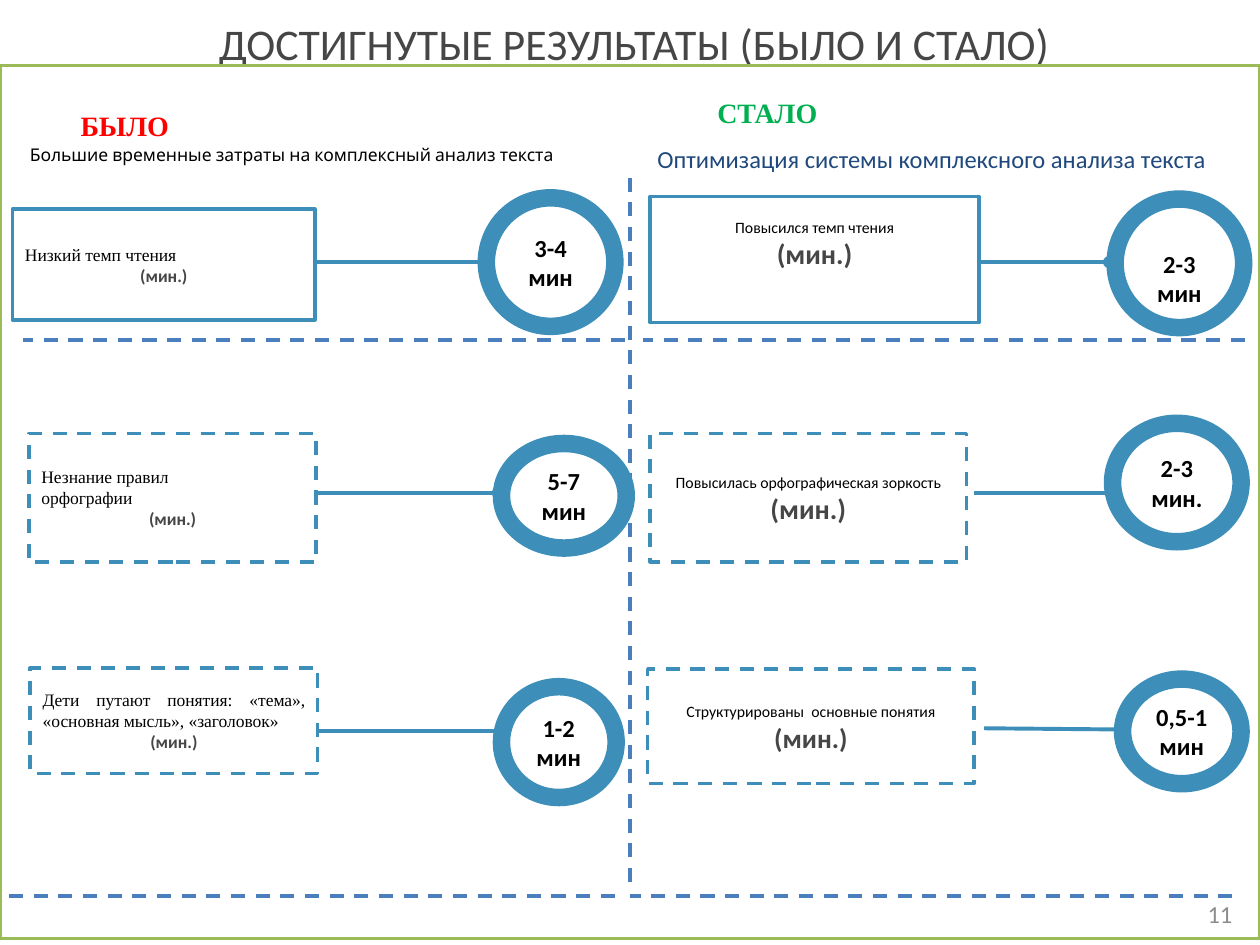
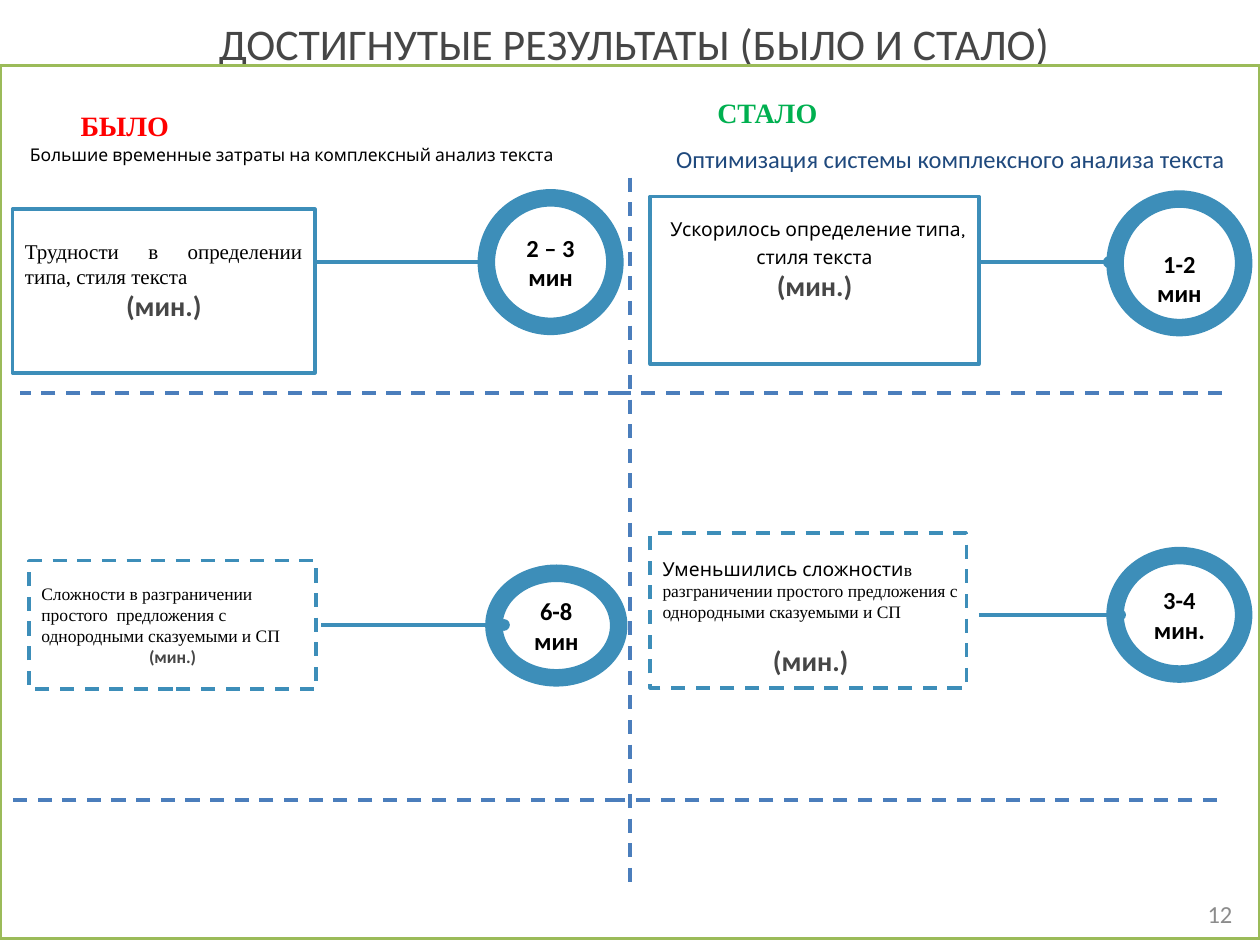
from dataclasses import dataclass

from lxml import etree
from pptx import Presentation
from pptx.dml import color
from pptx.enum import dml, shapes, text
from pptx.oxml import ns
from pptx.util import Emu, Inches, Pt

INK = {
    "blue": "3D8EB9", "dash": "4B7EBC", "green": "9BBB59", "white": "FFFFFF",
    "black": "000000", "grey": "464646", "pale": "8C8C8C", "red": "FF0000",
    "leaf": "00B050", "navy": "1F497D",
}
SANS, SERIF, KARLA = "Calibri", "Times New Roman", "Karla"
WIDE, HIGH = Inches(10), Inches(7.5)
COLS, ROWS = 100, 75
PAD = (1, 0.5, 1, 0.5)
ALIGN = text.PP_ALIGN
LEFT, MID, RIGHT, JUST = ALIGN.LEFT, ALIGN.CENTER, ALIGN.RIGHT, ALIGN.JUSTIFY
TITLE = "ДОСТИГНУТЫЕ РЕЗУЛЬТАТЫ (БЫЛО И СТАЛО) "
Area = tuple[float, float, float, float]


@dataclass(frozen=True)
class Run:
    words: str
    size: float
    font: str = SANS
    ink: str = "black"
    bold: bool = False


@dataclass(frozen=True)
class Para:
    runs: tuple[Run, ...]
    align: ALIGN = MID
    space: float = 1.0
    before: float = 0


@dataclass(frozen=True)
class Label:
    area: Area
    para: Para
    anchor: text.MSO_ANCHOR = text.MSO_ANCHOR.TOP


@dataclass(frozen=True)
class Rule:
    right: float
    row: float
    span: float = 47.8


@dataclass(frozen=True)
class Step:
    box: Area
    paras: list[Para]
    ring: Area
    time: tuple[str, ...]
    wire: Area
    dashed: bool = True
    pad: Area = PAD
    drop: float = 0


@dataclass(frozen=True)
class Page:
    number: str
    goal: float
    steps: list[Step]
    rules: list[Rule]


def col(n: float) -> Emu:
    return Emu(round(WIDE * n / COLS))


def row(n: float) -> Emu:
    return Emu(round(HIGH * n / ROWS))


def place(area: Area) -> tuple[Emu, Emu, Emu, Emu]:
    x, y, w, h = area
    return col(x), row(y), col(w), row(h)


def tint(name: str) -> color.RGBColor:
    return color.RGBColor.from_string(INK[name])


def write(frame, paras: list[Para], anchor=text.MSO_ANCHOR.MIDDLE, pad: Area = PAD) -> None:
    frame.word_wrap = True
    frame.auto_size = text.MSO_AUTO_SIZE.NONE
    frame.vertical_anchor = anchor
    frame.margin_left, frame.margin_top, frame.margin_right, frame.margin_bottom = place(pad)
    for i, para in enumerate(paras):
        line = frame.add_paragraph() if i else frame.paragraphs[0]
        line.alignment = para.align
        line.line_spacing = para.space
        line.space_before = Pt(para.before)
        for part in para.runs:
            run = line.add_run()
            run.text = part.words
            run.font.size = Pt(part.size)
            run.font.name = part.font
            run.font.bold = part.bold
            run.font.color.rgb = tint(part.ink)


def stroke(line, ink: str, width: float, dashed: bool = False) -> None:
    line.color.rgb = tint(ink)
    line.width = Pt(width)
    if dashed:
        line.dash_style = dml.MSO_LINE.DASH


def shape(slide, kind, area: Area, ink: str, width: float, filled: bool, dashed: bool = False):
    item = slide.shapes.add_shape(kind, *place(area))
    item.shadow.inherit = False
    if filled:
        item.fill.solid()
        item.fill.fore_color.rgb = tint("white")
    else:
        item.fill.background()
    stroke(item.line, ink, width, dashed)
    return item


def link(slide, ends: Area, ink: str, width: float, dashed: bool = False, dot: bool = False) -> None:
    wire = slide.shapes.add_connector(shapes.MSO_CONNECTOR.STRAIGHT, *place(ends))
    stroke(wire.line, ink, width, dashed)
    props = wire._element.spPr
    if dot:
        tail = etree.SubElement(props.find(ns.qn("a:ln")), ns.qn("a:tailEnd"))
        tail.set("type", "oval")
    etree.SubElement(props, ns.qn("a:effectLst"))


def label(slide, item: Label) -> None:
    box = slide.shapes.add_textbox(*place(item.area))
    write(box.text_frame, [item.para], item.anchor)


def step(slide, item: Step) -> None:
    kinds = shapes.MSO_SHAPE
    ring = shape(slide, kinds.FLOWCHART_CONNECTOR, item.ring, "blue", 10, True)
    time = [Para((Run(words, 14, bold=True),)) for words in item.time]
    write(ring.text_frame, time, pad=(0.5, item.drop, 0.5, 0))
    link(slide, item.wire, "blue", 2.25, dot=True)
    box = shape(slide, kinds.RECTANGLE, item.box, "blue", 2, not item.dashed, item.dashed)
    write(box.text_frame, item.paras, pad=item.pad)


def one(words: str, size: float, font: str = SANS, ink: str = "black",
        bold: bool = False, align: ALIGN = MID, space: float = 1.0) -> Para:
    return Para((Run(words, size, font, ink, bold),), align, space)


def unit(size: float, before: float = 0) -> Para:
    return Para((Run("(мин.)", size, SANS, "grey", True),), before=before)


def old(words: str, size: float = 10, align: ALIGN = JUST) -> Para:
    return one(words, size, SERIF, align=align)


def new(words: str) -> Para:
    return one(words, 9, space=1.15)


def build(deck, page: Page) -> None:
    slide = deck.slides.add_slide(deck.slide_layouts[5])
    title = slide.shapes.title
    title.left, title.top, title.width, title.height = place((1.2, -0.8, 99, 8.4))
    write(title.text_frame, [one(TITLE, 25, ink="grey")])
    link(slide, (50, 14.1, 50, 70.7), "dash", 2, dashed=True)
    for item in page.steps:
        step(slide, item)
    for rule in page.rules:
        ends = (rule.right, rule.row, rule.right - rule.span, rule.row)
        link(slide, ends, "dash", 2, dashed=True)
    shape(slide, shapes.MSO_SHAPE.RECTANGLE, (0, 5.2, 100, 69.3), "green", 2, False)
    for item in (
        Label((94, 70.5, 4.8, 4), one(page.number, 14, ink="pale", align=RIGHT),
              text.MSO_ANCHOR.MIDDLE),
        Label((2.7, 8.1, 14.4, 3.7), one("БЫЛО", 16, SERIF, "red", True)),
        Label((53.9, 7.1, 14, 3.7), one("СТАЛО", 16, SERIF, "leaf", True)),
        Label((0, 10.9, 46.3, 2.7),
              one("Большие временные затраты на комплексный анализ текста", 10, KARLA)),
        Label((page.goal, 10.9, 46.3, 3.4),
              one("Оптимизация системы комплексного анализа текста", 14, ink="navy")),
    ):
        label(slide, item)


RING_L, WIRE_L = (38.6, 15.7, 10.2, 10.2), (24.3, 20.8, 38.6, 20.8)
RING_R, WIRE_R = (88.5, 15.8, 10.2, 10.2), (76.7, 20.8, 88, 20.8)

PAGES = [
    Page("11", 50.8, [
        Step((1, 16.6, 24, 8.8), [old("Низкий темп чтения"), unit(10)],
             RING_L, ("3-4", "мин"), WIRE_L, dashed=False),
        Step((2.3, 34.4, 22.8, 10.2),
             [old("Незнание правил "), old("орфографии"), unit(10)],
             (39.8, 35.2, 9.9, 8.3), ("5-7", "мин"), (25, 39.1, 39.5, 39.1)),
        Step((2.4, 53, 22.8, 8.4),
             [old("Дети путают понятия: «тема», «основная мысль», «заголовок»"), unit(10)],
             (39.8, 54.5, 9.1, 8.8), ("1-2", "мин"), (25.2, 58, 39.7, 58)),
        Step((51.6, 15.6, 26.1, 10), [new("Повысился темп чтения"), unit(16)],
             RING_R, ("2-3", "мин"), WIRE_R, False, (1, 0.5, 1, 3.2), 2.4),
        Step((51.6, 34.4, 25.1, 10.2),
             [new("Повысилась орфографическая зоркость"), unit(16)],
             (88.3, 33.6, 10.2, 9.4), ("2-3", "мин."), (77.3, 39.1, 88.5, 39.1)),
        Step((51.4, 53.1, 25.9, 9.1),
             [new("Структурированы  основные понятия"), unit(15.5)],
             (89.1, 53.9, 9.4, 8.3), ("0,5-1", "мин"), (78.1, 57.8, 89.2, 57.9)),
    ], [Rule(49.6, 27), Rule(98.8, 27), Rule(48.8, 71.1, 48.8), Rule(97.8, 71.1)]),
    Page("12", 52.3, [
        Step((1, 16.6, 24, 13),
             [old("Трудности в определении типа, стиля текста", 12), unit(16)],
             RING_L, ("2 – 3", "мин"), WIRE_L, False, (1, 0.5, 1, 2.2)),
        Step((2.3, 44.5, 22.8, 10.2),
             [old("Сложности в разграничении  простого  предложения с "
                  "однородными сказуемыми и СП", align=LEFT), unit(10)],
             (39.2, 45.5, 9.9, 8.3), ("6-8", "мин"), (25.5, 49.6, 40, 49.6)),
        Step((51.6, 15.6, 26.1, 13.3),
             [Para((Run(" ", 16, SANS, "grey", True),
                    Run("Ускорилось определение типа, стиля текста", 11, KARLA)),
                   space=1.15), unit(16)],
             RING_R, ("1-2", "мин"), WIRE_R, False, (1, 0.5, 1, 4.9), 2.4),
        Step((51.6, 42.3, 25.1, 12.3),
             [Para((Run("Уменьшились сложности", 11, KARLA),
                    Run("в разграничении простого предложения с однородными "
                        "сказуемыми и СП", 10, SERIF)), LEFT), unit(16, 12)],
             (88.5, 44.1, 10.2, 9.4), ("3-4", "мин."), (77.7, 48.8, 88.9, 48.8),
             pad=(1, 1.5, 0.6, 0.5)),
    ], [Rule(49.4, 31.2), Rule(97, 31.2), Rule(49.1, 63.5, 48.8), Rule(96.6, 63.5)]),
]


def main() -> None:
    deck = Presentation()
    deck.slide_width, deck.slide_height = WIDE, HIGH
    for page in PAGES:
        build(deck, page)
    deck.save("out.pptx")


if __name__ == "__main__":
    main()
